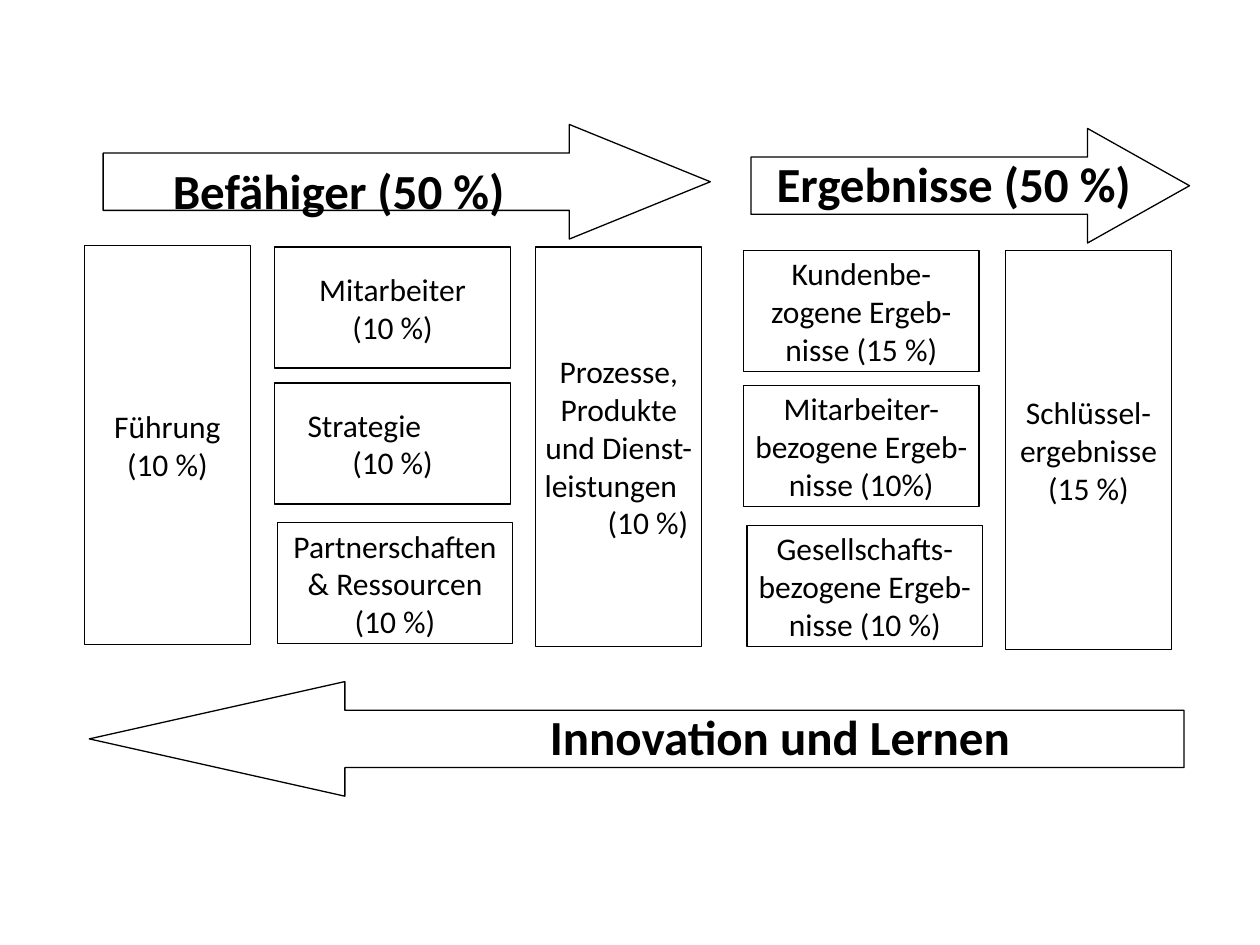
from dataclasses import dataclass

from pptx import Presentation
from pptx.dml.color import RGBColor
from pptx.enum.shapes import MSO_SHAPE
from pptx.enum.text import MSO_ANCHOR, PP_ALIGN
from pptx.shapes.autoshape import Shape
from pptx.slide import Slide
from pptx.util import Cm, Pt


@dataclass(frozen=True)
class Theme:
    ink: RGBColor = RGBColor(0, 0, 0)
    font: str = "Calibri"
    body: Pt = Pt(18)
    heading: Pt = Pt(28)
    line: Pt = Pt(0.75)


@dataclass(frozen=True)
class Para:
    text: str
    indent: float | None = None
    before: float = 0


@dataclass(frozen=True)
class Box:
    left: float
    top: float
    width: float
    height: float
    paras: tuple[Para, ...]


@dataclass(frozen=True)
class Arrow:
    left: float
    top: float
    width: float
    head: float
    rotation: int
    label: Box


THEME = Theme()
TALL = (3.35, 8.05)
SMALL = (4.75, 2.44)
ARROW_HEIGHT = 2.31

BOXES = (
    Box(1.7, 4.95, *TALL, (Para("Führung (10 %)"),)),
    Box(5.54, 4.98, *SMALL, (Para("Mitarbeiter", before=9), Para("(10 %)"))),
    Box(5.54, 7.72, *SMALL, (Para("Strategie", indent=0.48), Para("(10 %)"))),
    Box(5.59, 10.54, *SMALL,
        (Para("Partnerschaften & Ressourcen"), Para("(10 %)"))),
    Box(10.8, 4.98, *TALL,
        (Para("Prozesse, Produkte und Dienst-"),
         Para("leistungen", indent=0), Para("(10 %)", indent=1.27))),
    Box(14.99, 5.05, *SMALL, (Para("Kundenbe-zogene Ergeb-nisse (15 %)"),)),
    Box(14.99, 7.77, *SMALL, (Para("Mitarbeiter-bezogene Ergeb-nisse (10%)"),)),
    Box(15.06, 10.59, *SMALL,
        (Para("Gesellschafts-bezogene Ergeb-nisse (10 %)"),)),
    Box(20.27, 5.05, *TALL, (Para("Schlüssel-ergebnisse"), Para("(15 %)"))),
)

ARROWS = (
    Arrow(2.08, 2.51, 12.24, 1.23, 0,
          Box(2.34, 3.1, 8.97, 1.45, (Para("Befähiger (50 %)"),))),
    Arrow(15.14, 2.59, 8.84, 0.89, 0,
          Box(14.83, 3.15, 8.79, 1.09, (Para("Ergebnisse (50 %)"),))),
    Arrow(1.8, 13.74, 22.07, 2.23, 180,
          Box(8.99, 14.12, 13.46, 1.45, (Para("Innovation und Lernen"),))),
)


def set_attrs(target: object, values: dict[str, object]) -> None:
    for name, value in values.items():
        setattr(target, name, value)


def outline(sp: Shape) -> None:
    sp.shadow.inherit = False
    sp.fill.background()
    sp.line.color.rgb = THEME.ink
    sp.line.width = THEME.line


def write(sp: Shape, paras: tuple[Para, ...], size: Pt, bold: bool) -> None:
    tf = sp.text_frame
    set_attrs(tf, {
        "word_wrap": True, "vertical_anchor": MSO_ANCHOR.MIDDLE,
        "margin_left": Cm(0.18), "margin_right": Cm(0.18),
        "margin_top": Cm(0.1), "margin_bottom": Cm(0.1),
    })
    for i, para in enumerate(paras):
        p = tf.add_paragraph() if i else tf.paragraphs[0]
        p.alignment = PP_ALIGN.CENTER if para.indent is None else PP_ALIGN.LEFT
        p.space_before = Pt(para.before)
        if para.indent:
            p._p.get_or_add_pPr().set("marL", str(Cm(para.indent)))
        r = p.add_run()
        r.text = para.text
        set_attrs(r.font, {"name": THEME.font, "size": size, "bold": bold})
        r.font.color.rgb = THEME.ink


def frame(box: Box) -> tuple[Cm, Cm, Cm, Cm]:
    return Cm(box.left), Cm(box.top), Cm(box.width), Cm(box.height)


def draw_box(s: Slide, box: Box) -> None:
    sp = s.shapes.add_shape(MSO_SHAPE.RECTANGLE, *frame(box))
    outline(sp)
    write(sp, box.paras, THEME.body, False)


def draw_arrow(s: Slide, arrow: Arrow) -> None:
    sp = s.shapes.add_shape(MSO_SHAPE.RIGHT_ARROW, Cm(arrow.left), Cm(arrow.top),
                            Cm(arrow.width), Cm(ARROW_HEIGHT))
    outline(sp)
    sp.adjustments[0] = 0.5
    sp.adjustments[1] = arrow.head
    sp.rotation = arrow.rotation
    label = s.shapes.add_textbox(*frame(arrow.label))
    write(label, arrow.label.paras, THEME.heading, True)


def main() -> None:
    prs = Presentation()
    set_attrs(prs, {"slide_width": Cm(25.4), "slide_height": Cm(19.05)})
    s = prs.slides.add_slide(prs.slide_layouts[6])
    for box in BOXES:
        draw_box(s, box)
    for arrow in ARROWS:
        draw_arrow(s, arrow)
    prs.save("out.pptx")


if __name__ == "__main__":
    main()
